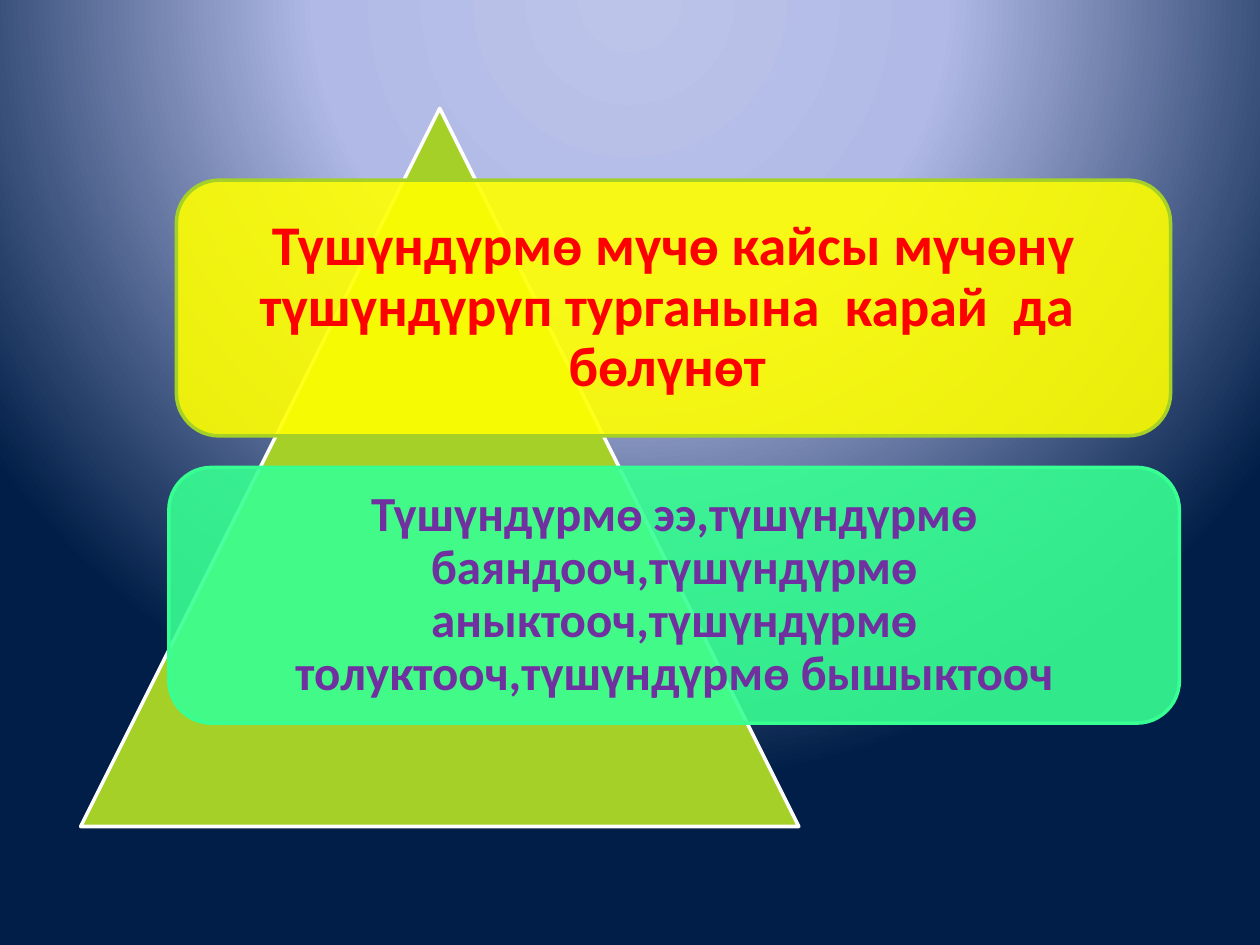
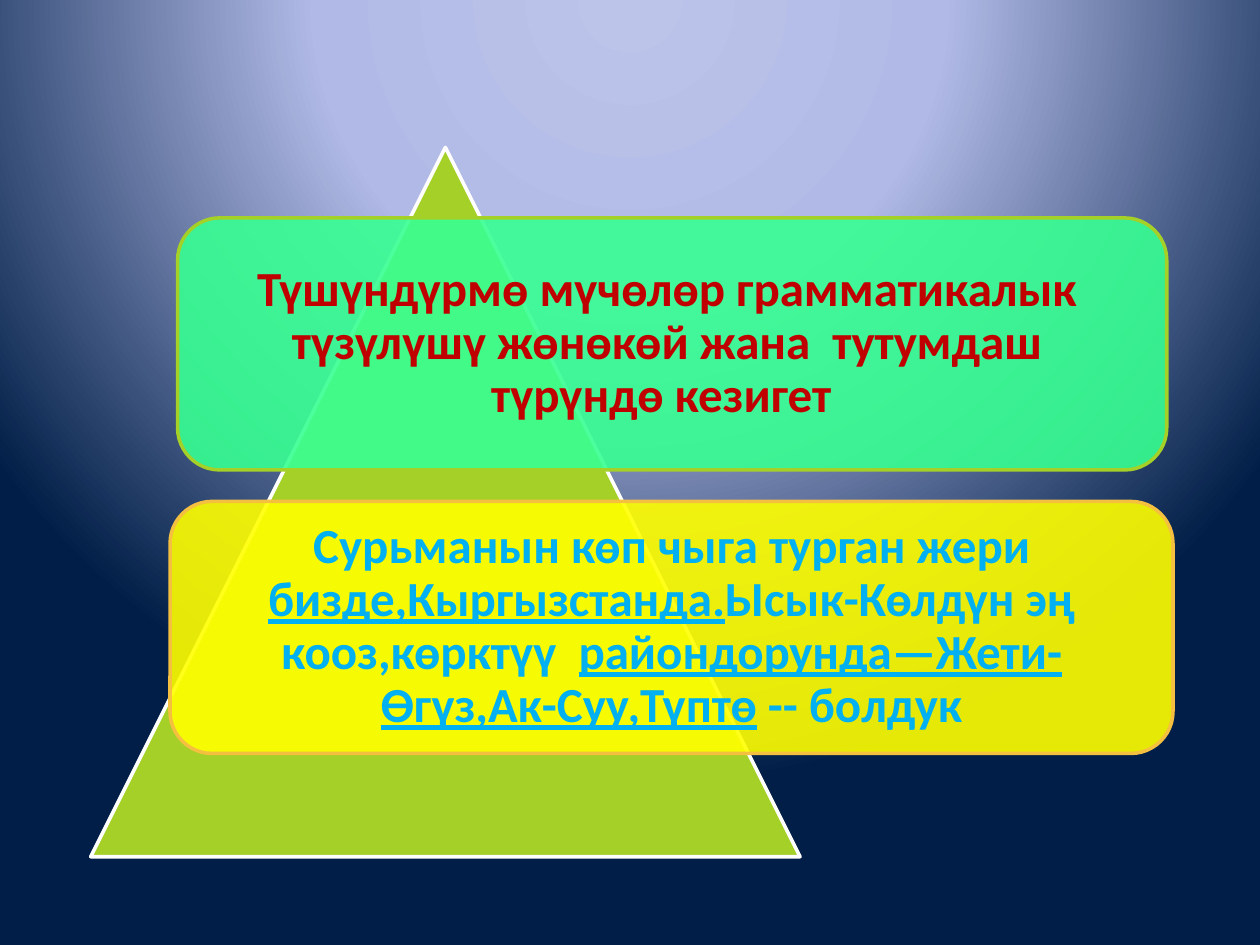
"""Two slides on explanatory sentence members: a triangle behind two rounded panels."""
from lxml import etree
from pptx import Presentation
from pptx.dml.color import RGBColor
from pptx.enum.shapes import MSO_SHAPE
from pptx.enum.text import MSO_ANCHOR, PP_ALIGN
from pptx.oxml import parse_xml
from pptx.oxml.ns import qn
from pptx.util import Inches, Pt

TRIANGLE = MSO_SHAPE.ISOSCELES_TRIANGLE
ROUNDED = MSO_SHAPE.ROUNDED_RECTANGLE
MIDDLE = MSO_ANCHOR.MIDDLE
CENTER = PP_ALIGN.CENTER

WHITE = RGBColor(0xFF, 0xFF, 0xFF)
LIME = RGBColor(0xA5, 0xD0, 0x28)
YELLOW = RGBColor(0xFF, 0xFF, 0x00)
MINT = RGBColor(0x37, 0xFF, 0x92)
AMBER = RGBColor(0xF5, 0xC0, 0x40)
RED = RGBColor(0xFF, 0x00, 0x00)
DARK_RED = RGBColor(0xC0, 0x00, 0x00)
PURPLE = RGBColor(0x70, 0x30, 0xA0)
SKY = RGBColor(0x00, 0xB0, 0xF0)
SPOTLIGHT = [(0, RGBColor(0xBC, 0xC4, 0xEA)), (40, RGBColor(0xB1, 0xBA, 0xE6)),
             (100, RGBColor(0x00, 0x1E, 0x47))]

FONT = "Calibri"
PANEL_OPACITY = 90


def add_outlined(slide, kind, box, fill, line):
    shape = slide.shapes.add_shape(kind, *map(Inches, box))
    shape.shadow.inherit = False
    shape.fill.solid()
    shape.fill.fore_color.rgb = fill
    shape.line.color.rgb = line
    shape.line.width = Pt(2)
    return shape


def paint_spotlight(slide):
    slide.background.fill.gradient()
    plain = next(slide.element.iter(qn("a:gradFill")))
    stops = "".join(f'<a:gs pos="{pos * 1000}"><a:srgbClr val="{color}"/></a:gs>'
                    for pos, color in SPOTLIGHT)
    plain.getparent().replace(plain, parse_xml(
        '<a:gradFill xmlns:a="http://schemas.openxmlformats.org/drawingml/2006/main" '
        f'rotWithShape="1"><a:gsLst>{stops}</a:gsLst><a:path path="circle">'
        '<a:fillToRect l="50000" t="-80000" r="50000" b="180000"/></a:path></a:gradFill>'))


SLIDES = [
    ((0.64, 0.86, 5.7, 5.7), [
        ((1.4, 1.43, 7.89, 2.03), YELLOW, LIME, RED, 32, 0.13, [
            ("Түшүндүрмө мүчө кайсы мүчөнү түшүндүрүп турганына  карай  да  бөлүнөт ", False)]),
        ((1.34, 3.71, 8.02, 2.03), MINT, MINT, PURPLE, 28, 0.12, [
            ("Түшүндүрмө ээ,түшүндүрмө баяндооч,түшүндүрмө аныктооч,"
             "түшүндүрмө толуктооч,түшүндүрмө бышыктооч", False)]),
    ]),
    ((0.72, 1.17, 5.63, 5.63), [
        ((1.41, 1.73, 7.85, 2), MINT, LIME, DARK_RED, 28, 0.12, [
            ("Түшүндүрмө мүчөлөр грамматикалык  түзүлүшү жөнөкөй жана  "
             "тутумдаш  түрүндө кезигет  ", False)]),
        ((1.35, 3.98, 7.96, 2), YELLOW, AMBER, SKY, 28, 0.12, [
            ("Сурьманын көп чыга турган жери ", False),
            ("бизде,Кыргызстанда.", True),
            ("Ысык-Көлдүн эң кооз,көрктүү  ", False),
            ("райондорунда—Жети-Өгүз,Ак-Суу,Түптө", True),
            (" -- болдук", False)]),
    ]),
]

prs = Presentation()
prs.slide_width, prs.slide_height = Inches(10), Inches(7.5)

for triangle_box, panels in SLIDES:
    slide = prs.slides.add_slide(prs.slide_layouts[6])
    paint_spotlight(slide)
    add_outlined(slide, TRIANGLE, triangle_box, LIME, WHITE)

    for box, fill, line, ink, size, inset, phrases in panels:
        panel = add_outlined(slide, ROUNDED, box, fill, line)
        fill_color = panel.element.spPr.find(qn("a:solidFill")).find(qn("a:srgbClr"))
        etree.SubElement(fill_color, qn("a:alpha"), val=str(PANEL_OPACITY * 1000))

        frame = panel.text_frame
        frame.word_wrap = True
        frame.vertical_anchor = MIDDLE
        frame.margin_left = frame.margin_right = Inches(inset)
        frame.margin_top = frame.margin_bottom = Inches(inset)

        statement = frame.paragraphs[0]
        statement.alignment = CENTER
        statement.line_spacing = 0.9
        statement.font.name = FONT
        statement.font.size = Pt(size)
        statement.font.bold = True
        statement.font.color.rgb = ink
        for words, underlined in phrases:
            phrase = statement.add_run()
            phrase.text = words
            if underlined:
                phrase.font.underline = True

prs.save("out.pptx")
